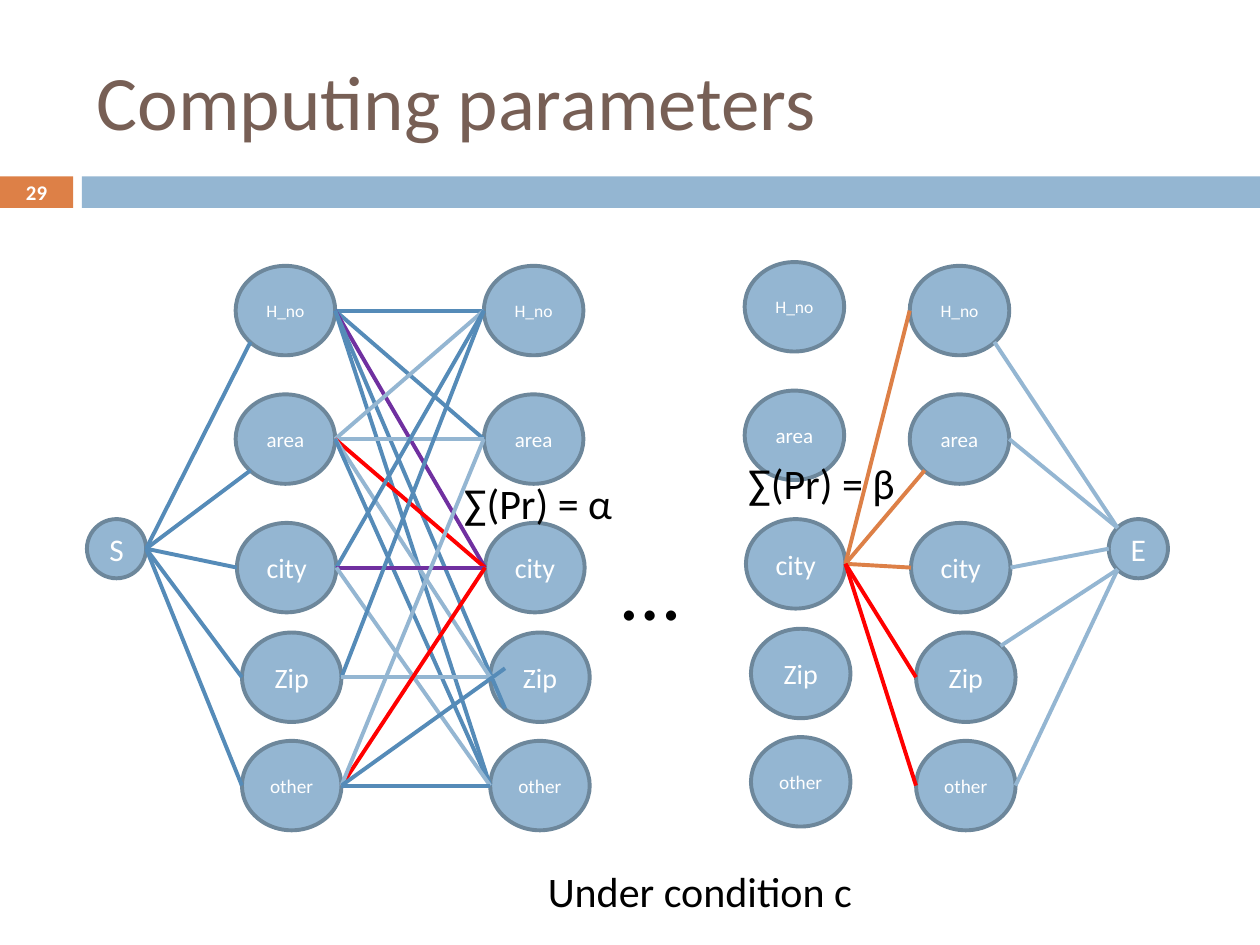
"""Build the slide on computing parameters in a lattice of address states."""
import pptx
import pptx.util
import pptx.dml.color
import pptx.enum.shapes
import pptx.enum.text
import pptx.oxml.ns
import lxml.etree

Inches = pptx.util.Inches
Pt = pptx.util.Pt
Shape = pptx.enum.shapes.MSO_SHAPE
Align = pptx.enum.text.PP_ALIGN
Anchor = pptx.enum.text.MSO_ANCHOR

hues = {
    "pale": "94B6D2", "deep": "558BB8", "edge": "6D879B", "orange": "DD8047",
    "red": "FF0000", "purple": "7030A0", "brown": "775F55",
    "white": "FFFFFF", "black": "000000",
}
rgb = {key: pptx.dml.color.RGBColor.from_string(hue) for key, hue in hues.items()}

deck = pptx.Presentation()
deck.slide_width, deck.slide_height = Inches(10), Inches(7.5)
slide = deck.slides.add_slide(deck.slide_layouts[6])


def write(shape, text, size, hue, align=Align.CENTER, anchor=Anchor.MIDDLE, bold=False):
    frame = shape.text_frame
    frame.word_wrap = True
    frame.vertical_anchor = anchor
    para = frame.paragraphs[0]
    para.text = text
    para.alignment = align
    para.font.name = "Calibri"
    para.font.size = Pt(size)
    para.font.bold = bold
    para.font.color.rgb = rgb[hue]


def draw(kind, box, fill, edge=None):
    shape = slide.shapes.add_shape(kind, *map(Inches, box))
    shape.shadow.inherit = False
    shape.fill.solid()
    shape.fill.fore_color.rgb = rgb[fill]
    if edge:
        shape.line.color.rgb = rgb[edge]
        shape.line.width = Pt(2.25)
    else:
        shape.line.fill.background()
    return shape


badge = draw(Shape.RECTANGLE, (0, 1.4, 0.58, 0.25), "orange")
badge.text_frame.margin_top = badge.text_frame.margin_bottom = 0
write(badge, "29", 11.9, "white", bold=True)
draw(Shape.RECTANGLE, (0.65, 1.4, 9.35, 0.25), "pale")
title = slide.shapes.add_textbox(*map(Inches, (0.67, 0.25, 8.92, 1.08)))
write(title, "Computing parameters", 44, "brown", Align.LEFT)

states = [
    ("H_no", 0, 0, 10), ("area", 0, 1.02, 12), ("city", 0.01, 2.04, 16),
    ("Zip", 0.05, 2.91, 16), ("other", 0.05, 3.77, 11),
]
columns = [(1.87, 2.11), (3.84, 2.11), (5.91, 2.08), (7.22, 2.11)]
nodes = {"S": (0.69, 4.12, 0.47, 0.47), "E": (8.8, 4.12, 0.47, 0.47)}
labels = {"S": ("S", 18), "E": ("E", 18)}
for col, (left, top) in enumerate(columns, 1):
    for name, dx, dy, size in states:
        key = f"{name}{col}"
        nodes[key] = (left + dx, top + dy, 0.79, 0.71)
        labels[key] = (name, size)

for key, box in nodes.items():
    circle = draw(Shape.OVAL, box, "pale", "edge")
    frame = circle.text_frame
    frame.margin_left = frame.margin_right = 0
    write(circle, *labels[key], "white")

ports = {
    "left": (0, 0.5), "right": (1, 0.5), "inner": (0.43, 0.5), "upper": (0.15, 0.4),
    "nw": (0.15, 0.15), "ne": (0.85, 0.15), "sw": (0.15, 0.85), "se": (0.85, 0.85),
}
links = [
    ("S right", ["H_no1 sw deep", "area1 sw deep", "city1 left deep",
                 "Zip1 left deep", "other1 left deep"]),
    ("H_no1 right", ["H_no2 left deep", "area2 left deep", "city2 left purple",
                     "Zip2 sw deep", "other2 left deep"]),
    ("area1 right", ["H_no2 left pale", "area2 left pale", "city2 left red",
                     "Zip2 left pale", "other2 left deep"]),
    ("city1 right", ["H_no2 left deep", "city2 left purple", "other2 left pale"]),
    ("Zip1 right", ["H_no2 left deep", "Zip2 inner pale"]),
    ("other1 right", ["city2 left red", "other2 left deep", "area2 left pale",
                      "Zip2 upper deep"]),
    ("H_no4 se", ["E nw pale"]),
    ("area4 right", ["E nw pale"]),
    ("city4 right", ["E left pale"]),
    ("Zip4 ne", ["E sw pale"]),
    ("other4 right", ["E sw pale"]),
    ("city3 right", ["H_no4 left orange", "area4 sw orange", "city4 left orange",
                     "Zip4 left red", "other4 left red"]),
]
for start, ends in links:
    for end in ends:
        goal, port, hue = end.split()
        points = []
        for key, side in (start.split(), (goal, port)):
            left, top, width, height = nodes[key]
            fx, fy = ports[side]
            points += [Inches(left + fx * width), Inches(top + fy * height)]
        link = slide.shapes.add_connector(pptx.enum.shapes.MSO_CONNECTOR.STRAIGHT, *points)
        link.line.color.rgb = rgb[hue]
        link.line.width = Pt(2.25)
        lxml.etree.SubElement(link._element.spPr, pptx.oxml.ns.qn("a:effectLst"))

notes = [
    ("…", 48, (4.65, 4.21, 1.02, 0.91)),
    ("∑(Pr) = α", 24, (3.47, 3.74, 1.6, 0.5)),
    ("∑(Pr) = β", 24, (5.72, 3.58, 1.6, 0.5)),
    ("Under condition c", 24, (3.89, 6.82, 3.33, 0.5)),
]
for text, size, box in notes:
    note = slide.shapes.add_textbox(*map(Inches, box))
    write(note, text, size, "black", anchor=Anchor.TOP)

deck.save("out.pptx")
